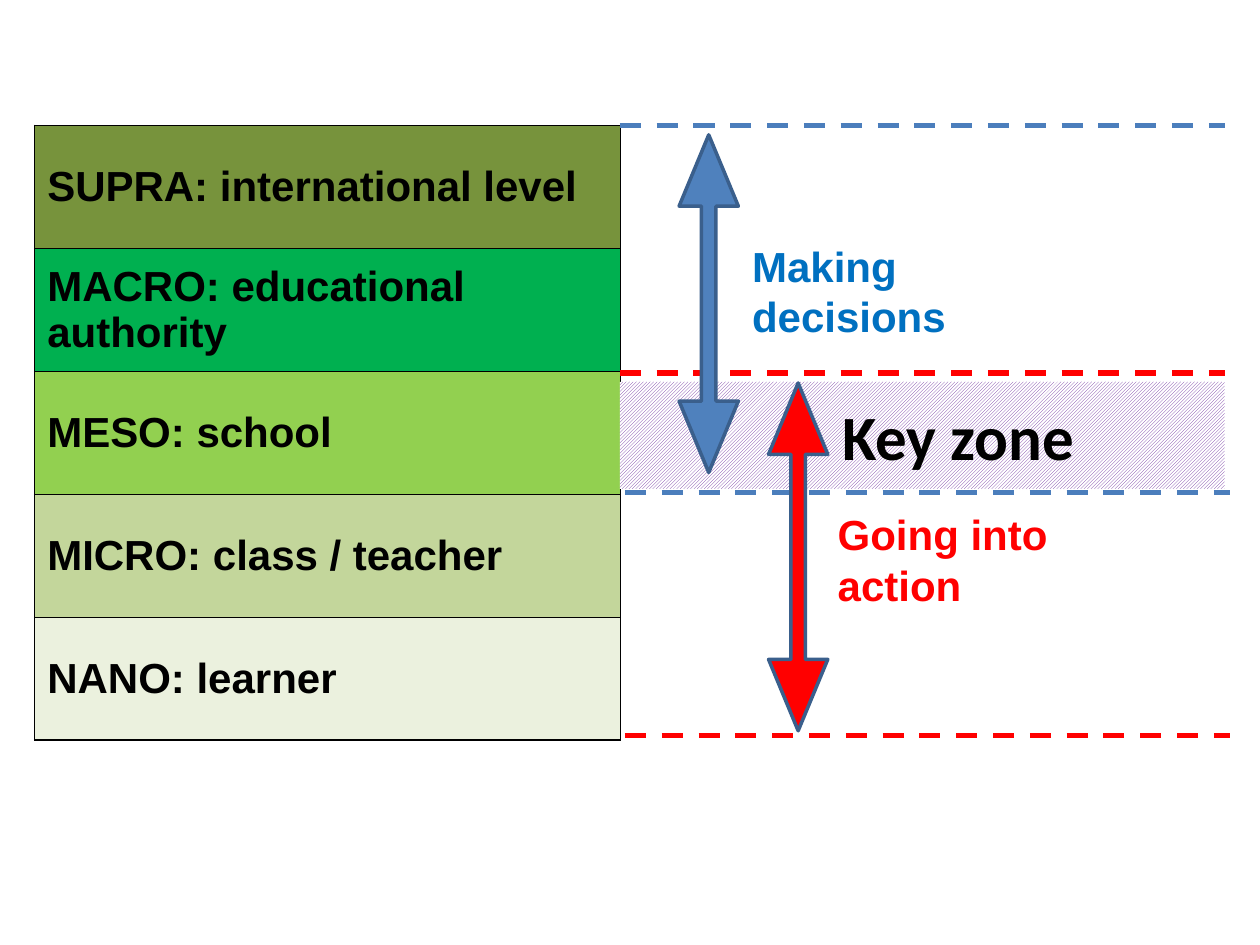
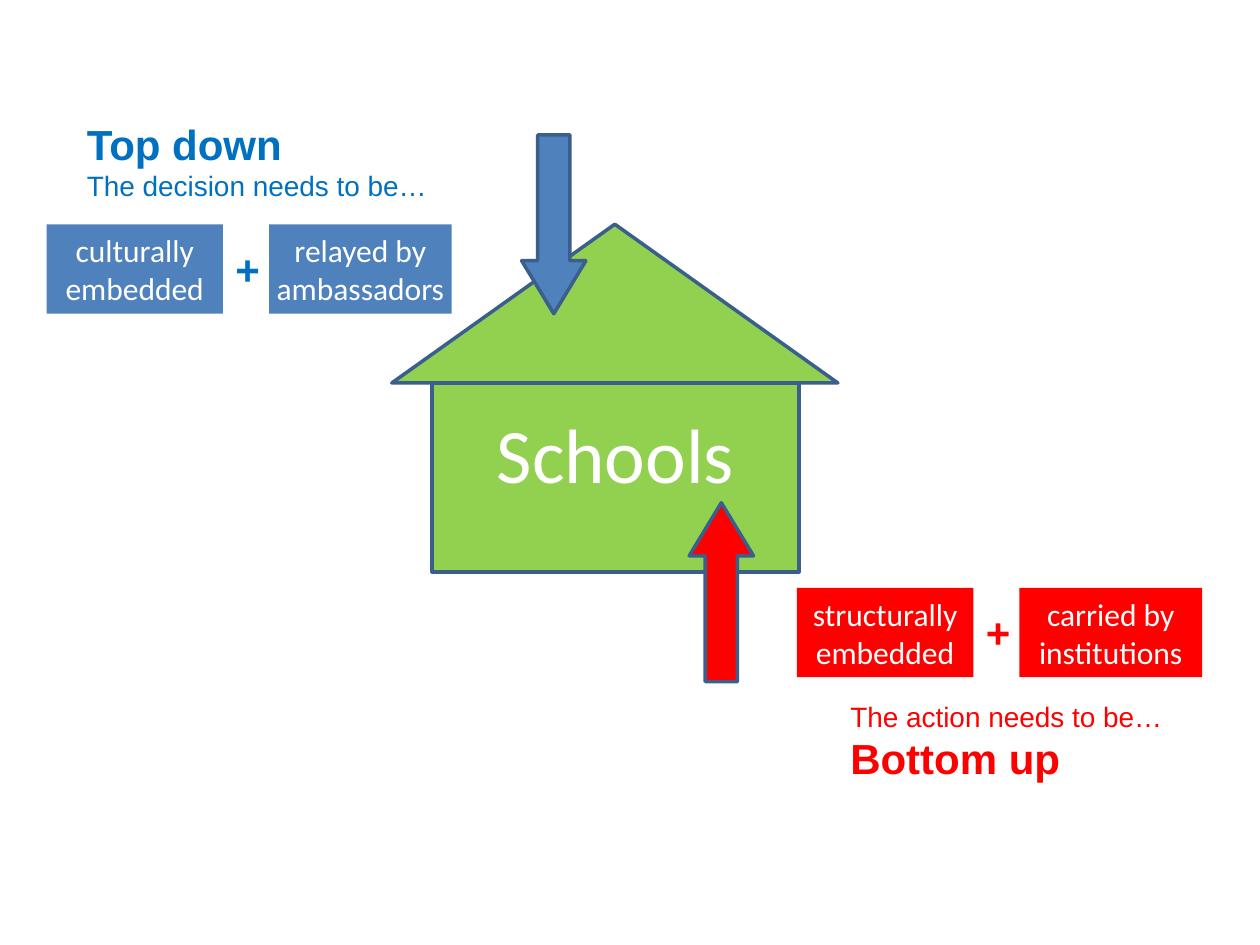
from dataclasses import dataclass

from lxml import etree
from pptx import Presentation
from pptx.dml.color import RGBColor as RGB
from pptx.enum.dml import MSO_LINE, MSO_PATTERN
from pptx.enum.shapes import MSO_CONNECTOR, MSO_SHAPE as SHAPE
from pptx.enum.text import MSO_ANCHOR as ANCHOR, MSO_AUTO_SIZE as AUTO, PP_ALIGN as ALIGN
from pptx.oxml import parse_xml
from pptx.oxml.ns import nsdecls, qn
from pptx.util import Inches, Pt

COLUMNS, ROWS = 100, 75
WIDTH, HEIGHT = Inches(10), Inches(7.5)


@dataclass(frozen=True)
class Theme:
    heading_font: str = "Arial"
    label_font: str = "Calibri"
    heading: int = 24
    lead: int = 16
    label: int = 18
    zone: int = 36
    house: int = 44
    black: str = "000000"
    white: str = "FFFFFF"
    blue: str = "4F81BD"
    blue_text: str = "0070C0"
    blue_dash: str = "4B7EBC"
    outline: str = "3A5F8C"
    red: str = "FF0000"
    green: str = "92D050"
    purple: str = "7030A0"


T = Theme()
LEVELS = (
    ("SUPRA: international level", "77933C"),
    ("MACRO: educational authority", "00B050"),
    ("MESO: school", T.green),
    ("MICRO: class / teacher", "C3D69B"),
    ("NANO: learner", "EBF1DE"),
)


def place(x, y, w, h):
    """Turn grid columns and rows into slide lengths."""
    return (int(WIDTH * x / COLUMNS), int(HEIGHT * y / ROWS),
            int(WIDTH * w / COLUMNS), int(HEIGHT * h / ROWS))


def set_font(p, name, size, color, bold=False):
    p.font.name, p.font.size, p.font.bold = name, Pt(size), bold
    p.font.color.rgb = RGB.from_string(color)


def add_shape(s, kind, at, fill, outlined=False):
    sp = s.shapes.add_shape(kind, *place(*at))
    sp.shadow.inherit = False
    sp.fill.solid()
    sp.fill.fore_color.rgb = RGB.from_string(fill)
    if outlined:
        sp.line.color.rgb = RGB.from_string(T.outline)
        sp.line.width = Pt(2)
    else:
        sp.line.fill.background()
    return sp


def add_arrow(s, kind, at, fill, shaft, head):
    """Add a block arrow; shaft width and head length are shares of its width."""
    arrow = add_shape(s, kind, at, fill, True)
    guides = arrow._element.spPr.find(qn("a:prstGeom")).find(qn("a:avLst"))
    for guide in list(guides):
        guides.remove(guide)
    for name, share in (("adj1", shaft), ("adj2", head)):
        etree.SubElement(guides, qn("a:gd"), name=name, fmla=f"val {round(share * 100000)}")
    return arrow


def add_label(sp, text, size, color=T.white, bold=False, anchor=ANCHOR.MIDDLE):
    tf = sp.text_frame
    tf.word_wrap, tf.vertical_anchor = True, anchor
    p = tf.paragraphs[0]
    p.text, p.alignment = text, ALIGN.CENTER
    set_font(p, T.label_font, size, color, bold)
    return tf


def add_text(s, at, color, *lines):
    """Add a text box; each line is (text, size), and heading-size lines are bold."""
    tf = s.shapes.add_textbox(*place(*at)).text_frame
    tf.word_wrap, tf.auto_size = True, AUTO.SHAPE_TO_FIT_TEXT
    for i, (text, size) in enumerate(lines):
        p = tf.add_paragraph() if i else tf.paragraphs[0]
        p.text = text
        set_font(p, T.heading_font, size, color, size == T.heading)


def add_dashed_line(s, x, y, color):
    left, top, length, _ = place(x, y, 48, 0)
    line = s.shapes.add_connector(MSO_CONNECTOR.STRAIGHT, left, top, left + length, top)
    line.line.color.rgb = RGB.from_string(color)
    line.line.width, line.line.dash_style = Pt(3), MSO_LINE.DASH
    etree.SubElement(line._element.spPr, qn("a:effectLst"))


def add_borders(cell):
    tc_pr = cell._tc.get_or_add_tcPr()
    for i, side in enumerate(("lnL", "lnR", "lnT", "lnB")):
        tc_pr.insert(i, parse_xml(
            f'<a:{side} {nsdecls("a")} w="{Pt(1)}"><a:solidFill>'
            f'<a:srgbClr val="{T.black}"/></a:solidFill></a:{side}>'))


def add_levels(s, at):
    table = s.shapes.add_table(len(LEVELS), 1, *place(*at)).table
    table.first_row = table.horz_banding = False
    for row, (text, color) in enumerate(LEVELS):
        cell = table.cell(row, 0)
        cell.vertical_anchor = ANCHOR.MIDDLE
        cell.fill.solid()
        cell.fill.fore_color.rgb = RGB.from_string(color)
        cell.text = text
        set_font(cell.text_frame.paragraphs[0], T.heading_font, T.heading, T.black, True)
        add_borders(cell)


def add_key_zone(s, at):
    zone = add_shape(s, SHAPE.RECTANGLE, at, T.white)
    zone.fill.patterned()
    zone.fill.pattern = MSO_PATTERN.DARK_UPWARD_DIAGONAL
    zone.fill.fore_color.rgb = RGB.from_string(T.purple)
    zone.fill.back_color.rgb = RGB.from_string(T.white)
    tf = add_label(zone, "Key zone", T.zone, T.black, True)
    tf.margin_left = Inches(0.67)


def add_conditions(s, x, y, fill, plus_color, first, second):
    """Add two filled boxes with a plus sign between them."""
    add_label(add_shape(s, SHAPE.RECTANGLE, (x, y, 14, 7.1), fill), first, T.label)
    tf = add_label(add_shape(s, SHAPE.RECTANGLE, (x + 17.65, y, 14.5, 7.1), fill),
                   second, T.label)
    tf.margin_left = tf.margin_right = 0
    add_text(s, (x + 14, y + 1, 3.2, 5), plus_color, ("+", T.heading))


def add_house(s):
    walls = add_shape(s, SHAPE.RECTANGLE, (34.3, 30.4, 29.1, 15), T.green, True)
    tf = add_label(walls, "Schools", T.house, anchor=ANCHOR.TOP)
    tf.margin_top = Inches(0.19)
    add_shape(s, SHAPE.ISOSCELES_TRIANGLE, (31.1, 17.8, 35.4, 12.6), T.green, True)


def build_levels_slide(s):
    add_levels(s, (2.75, 9.95, 46.5, 48.8))
    add_text(s, (58.7, 18.6, 25.2, 9.1), T.blue_text, ("Making decisions", T.heading))
    add_text(s, (65.5, 39.9, 25.2, 9.1), T.red, ("Going into action", T.heading))
    add_dashed_line(s, 49.2, 9.95, T.blue_dash)
    add_dashed_line(s, 49.6, 58.4, T.red)
    add_key_zone(s, (49.2, 30.3, 48, 8.5))
    add_dashed_line(s, 49.6, 39.1, T.blue_dash)
    add_dashed_line(s, 49.2, 29.6, T.red)
    for at, color in (((53.9, 10.7, 4.7, 26.8), T.blue), ((61, 30.4, 4.7, 27.6), T.red)):
        add_arrow(s, SHAPE.UP_DOWN_ARROW, at, color, 0.243, 1.205)


def build_schools_slide(s):
    add_house(s)
    for x, y, color, turn in ((54.7, 39.9, T.red, 0), (41.4, 10.7, T.blue, 180)):
        arrow = add_arrow(s, SHAPE.UP_ARROW, (x, y, 5.1, 14.2), color, 0.5, 0.826)
        arrow.rotation = turn
    add_text(s, (5.9, 8.9, 35.5, 7.7), T.blue_text,
             ("Top down", T.heading), ("The decision needs to be…", T.lead))
    add_conditions(s, 3.7, 17.8, T.blue, T.blue_text,
                   "culturally embedded", "relayed by ambassadors")
    add_text(s, (66.5, 55, 32.3, 7.7), T.red,
             ("The action needs to be…", T.lead), ("Bottom up", T.heading))
    add_conditions(s, 63.25, 46.65, T.red, T.red,
                   "structurally embedded", "carried by institutions")


def main():
    prs = Presentation()
    prs.slide_width, prs.slide_height = WIDTH, HEIGHT
    for build in (build_levels_slide, build_schools_slide):
        build(prs.slides.add_slide(prs.slide_layouts[6]))
    prs.save("out.pptx")


if __name__ == "__main__":
    main()
